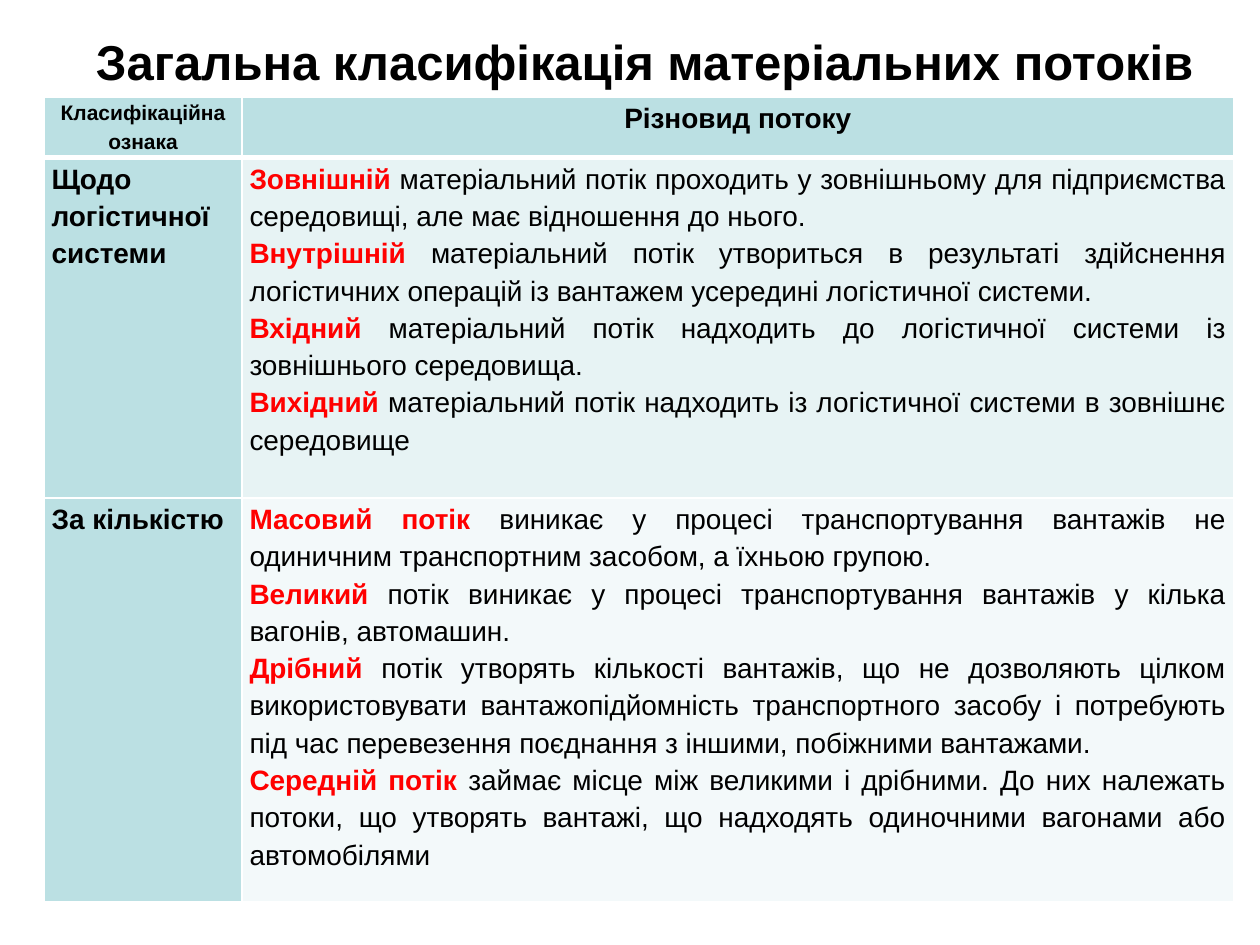
from lxml import etree
from pptx import Presentation
from pptx.dml.color import RGBColor
from pptx.enum.text import MSO_ANCHOR, PP_ALIGN
from pptx.oxml.ns import qn
from pptx.util import Cm, Pt

LEFT, CENTER, JUSTIFY = PP_ALIGN.LEFT, PP_ALIGN.CENTER, PP_ALIGN.JUSTIFY
MIDDLE = MSO_ANCHOR.MIDDLE
BLACK, RED, WHITE, TEAL = "000000", "FF0000", "FFFFFF", "BBE0E3"


def color(target, value):
    if hasattr(target, "solid"):
        target.solid()
        target = target.fore_color
    target.rgb = RGBColor.from_string(value)


def add_run(p, text, size, value, bold=True):
    r = p.add_run()
    r.text = text
    for name, setting in {"name": "Arial", "size": Pt(size), "bold": bold}.items():
        setattr(r.font, name, setting)
    color(r.font.color, value)


prs = Presentation()
prs.slide_width, prs.slide_height = Cm(25.4), Cm(19.05)
s = prs.slides.add_slide(prs.slide_layouts[5])

title = s.shapes.title
box = {"left": Cm(0.43), "top": Cm(0.5), "width": Cm(24), "height": Cm(1.45)}
for name, value in box.items():
    setattr(title, name, value)
tf = title.text_frame
tf.word_wrap = True
tf.vertical_anchor = MIDDLE
p = tf.paragraphs[0]
p.alignment = LEFT
p._p.get_or_add_pPr().set("indent", str(Cm(1.25)))
add_run(p, "Загальна класифікація матеріальних потоків", 28, BLACK)

external = [
    ("Зовнішній", " матеріальний потік проходить у зовнішньому для підприємства середовищі, "
                  "але має відношення до нього."),
    ("Внутрішній", " матеріальний потік утвориться в результаті здійснення логістичних операцій "
                   "із вантажем усередині логістичної системи."),
    ("Вхідний", " матеріальний потік надходить до логістичної системи із зовнішнього середовища."),
    ("Вихідний", " матеріальний потік надходить із логістичної системи в зовнішнє середовище"),
]
quantity = [
    ("Масовий потік", " виникає у процесі транспортування вантажів не одиничним транспортним "
                      "засобом, а їхньою групою."),
    ("Великий", " потік виникає у процесі транспортування вантажів у кілька вагонів, автомашин."),
    ("Дрібний", " потік утворять кількості вантажів, що не дозволяють цілком використовувати "
                "вантажопідйомність транспортного засобу і потребують під час перевезення "
                "поєднання з іншими, побіжними вантажами."),
    ("Середній потік", " займає місце між великими і дрібними. До них належать потоки, що утворять "
                       "вантажі, що надходять одиночними вагонами або автомобілями"),
]
rows = [
    (1.22, ("Класифікаційна ознака", 12, TEAL), ("Різновид потоку", 16, TEAL)),
    (6.86, ("Щодо логістичної системи", 16, TEAL), (external, 16, "E7F3F4")),
    (8.13, ("За кількістю", 16, TEAL), (quantity, 16, "F3F9FA")),
]
widths = [3.99, 19.99]
margins = {"margin_left": Cm(0.15), "margin_right": Cm(0.15), "margin_top": 0, "margin_bottom": 0}

table = s.shapes.add_table(len(rows), len(widths), Cm(0.89), Cm(1.96),
                           Cm(sum(widths)), Cm(sum(row[0] for row in rows))).table
for column, width in zip(table.columns, widths):
    column.width = Cm(width)

for i, (height, *cells) in enumerate(rows):
    table.rows[i].height = Cm(height)
    for j, (content, size, background) in enumerate(cells):
        cell = table.cell(i, j)
        for name, value in margins.items():
            setattr(cell, name, value)
        color(cell.fill, background)
        tcPr = cell._tc.get_or_add_tcPr()
        for k, side in enumerate(("lnL", "lnR", "lnT", "lnB")):
            thick = (i, side) in ((0, "lnB"), (1, "lnT"))
            ln = etree.Element(qn("a:" + side), w=str(Pt(3 if thick else 1)))
            fill = etree.SubElement(ln, qn("a:solidFill"))
            etree.SubElement(fill, qn("a:srgbClr"), val=WHITE)
            tcPr.insert(k, ln)
        tf = cell.text_frame
        paragraphs = [(content, "")] if isinstance(content, str) else content
        for n, (term, text) in enumerate(paragraphs):
            p = tf.add_paragraph() if n else tf.paragraphs[0]
            p.alignment = JUSTIFY if i else CENTER
            p.line_spacing = 1.2
            add_run(p, term, size, RED if text else BLACK)
            if text:
                add_run(p, text, size, BLACK, False)

prs.save("out.pptx")
